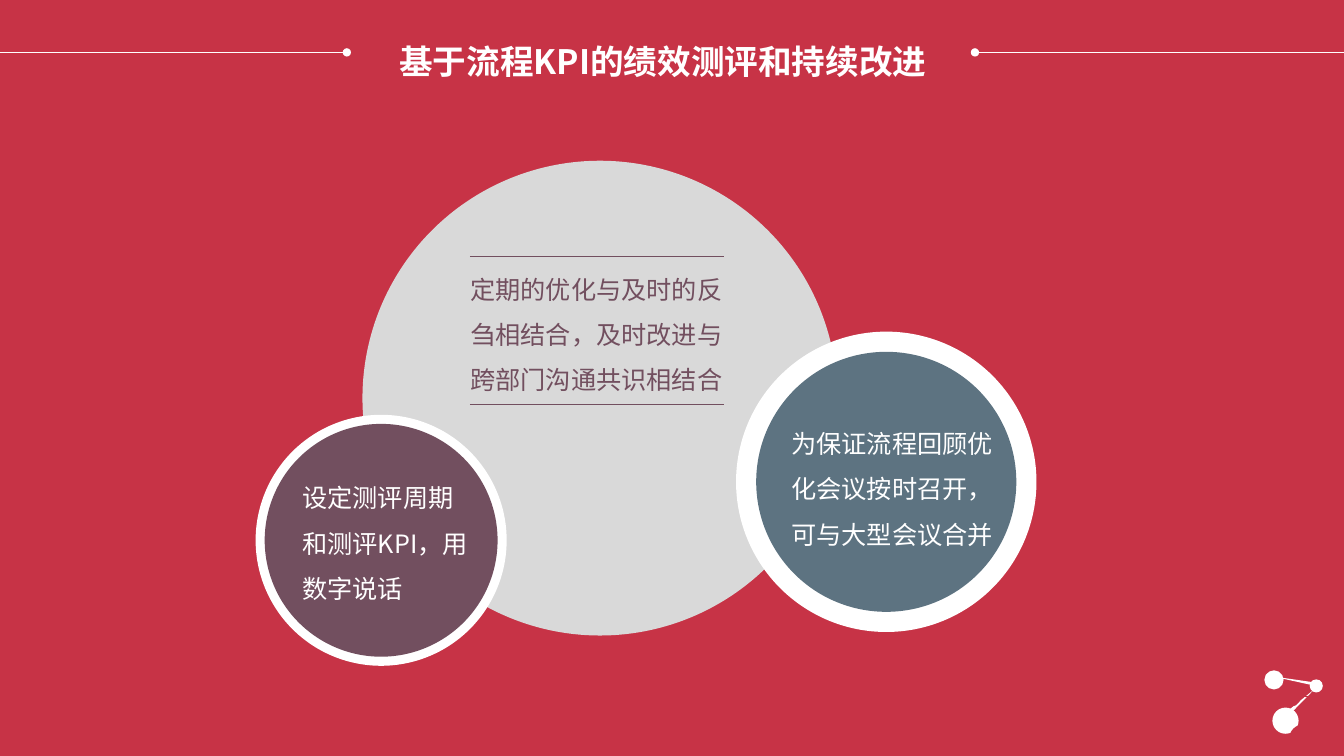
from lxml.etree import SubElement
from pptx import Presentation
from pptx.dml.color import RGBColor
from pptx.enum.shapes import MSO_CONNECTOR, MSO_SHAPE
from pptx.enum.text import MSO_ANCHOR, MSO_AUTO_SIZE, PP_ALIGN
from pptx.oxml.ns import qn
from pptx.util import Inches, Pt

FONT = "Noto Sans CJK SC"
COLORS = {"red": "C73346", "white": "FFFFFF", "gray": "D9D9D9",
          "slate": "5D7381", "plum": "724F5F"}


def add_solid(parent, kind, box, color, turn=0):
    shape = parent.add_shape(kind, *[Inches(n) for n in box])
    shape.fill.solid()
    shape.fill.fore_color.rgb = RGBColor.from_string(COLORS[color])
    shape.line.fill.background()
    shape.shadow.inherit = False
    shape.rotation = turn
    return shape


def set_text(shape, box, text, size, color, bold=False, align=PP_ALIGN.LEFT):
    shape.left, shape.top, shape.width, shape.height = [Inches(n) for n in box]
    frame = shape.text_frame
    frame.text = text
    frame.word_wrap = True
    frame.auto_size = MSO_AUTO_SIZE.SHAPE_TO_FIT_TEXT
    frame.vertical_anchor = MSO_ANCHOR.TOP
    para = frame.paragraphs[0]
    para.alignment = align
    para.line_spacing = 1.5
    font = para.runs[0].font
    font.size, font.bold, font.name = Pt(size), bold, FONT
    font.color.rgb = RGBColor.from_string(COLORS[color])
    # East Asian typeface
    SubElement(para.runs[0].font._element, qn("a:ea"), typeface=FONT)


deck = Presentation()
deck.slide_width, deck.slide_height = Inches(13.33), Inches(7.5)
slide = deck.slides.add_slide(deck.slide_layouts[5])
shapes = slide.shapes

# Red backdrop, placed behind the title
title = shapes.title
back = add_solid(shapes, MSO_SHAPE.RECTANGLE, (0, 0, 13.33, 7.5), "red")
title.element.addprevious(back.element)
set_text(title, (3.86, 0.16, 5.48, 0.64), "基于流程KPI的绩效测评和持续改进",
         24, "white", bold=True)

# Circles: center x, center y, diameter, color
circles = [
    (5.95, 3.95, 4.71, "gray"),
    (8.79, 4.78, 2.98, "white"),
    (8.79, 4.78, 2.58, "slate"),
    (3.78, 5.36, 2.49, "white"),
    (3.78, 5.36, 2.31, "plum"),
]
for x, y, size, color in circles:
    box = (x - size / 2, y - size / 2, size, size)
    add_solid(shapes, MSO_SHAPE.OVAL, box, color)

# Circle texts
notes = [
    ((4.48, 2.52, 2.87, 1.46), "定期的优化与及时的反刍相结合，及时改进与跨部门沟通共识相结合",
     "plum", PP_ALIGN.CENTER),
    ((7.75, 4.05, 2.38, 1.46), "为保证流程回顾优化会议按时召开，可与大型会议合并",
     "white", PP_ALIGN.LEFT),
    ((2.9, 4.59, 1.92, 1.46), "设定测评周期和测评KPI，用数字说话",
     "white", PP_ALIGN.LEFT),
]
for box, text, color, align in notes:
    set_text(shapes.add_textbox(0, 0, 0, 0), box, text, 18, color, align=align)

# Rules beside the title and around the middle text: start, end, y, color, dot
rules = [
    (3.44, 0, 0.52, "white", True),
    (9.67, 13.33, 0.52, "white", True),
    (4.66, 7.18, 2.54, "plum", False),
    (4.66, 7.18, 4.01, "plum", False),
]
for start, end, y, color, dot in rules:
    rule = shapes.add_connector(MSO_CONNECTOR.STRAIGHT, Inches(start), Inches(y),
                                Inches(end), Inches(y))
    rule.line.width = Pt(0.5)
    rule.line.color.rgb = RGBColor.from_string(COLORS[color])
    if dot:
        SubElement(rule.line._get_or_add_ln(), qn("a:headEnd"), type="oval")
    SubElement(rule.element.spPr, qn("a:effectLst"))

# Corner ornament: white nodes, then the same nodes in red, shifted
nodes = [
    (MSO_SHAPE.OVAL, 12.62, 7.02, 0.26, 0.26, 0),
    (MSO_SHAPE.OVAL, 12.99, 6.74, 0.13, 0.13, 0),
    (MSO_SHAPE.ISOSCELES_TRIANGLE, 12.85, 6.76, 0.05, 0.45, 47.7),
    (MSO_SHAPE.OVAL, 12.54, 6.65, 0.19, 0.19, 0),
    (MSO_SHAPE.ISOSCELES_TRIANGLE, 12.8, 6.54, 0.03, 0.41, 280.3),
]
for color, shift in (("white", 0), ("red", 0.17)):
    group = shapes.add_group_shape()
    for kind, x, y, wide, high, turn in nodes:
        box = (x + shift, y + shift, wide, high)
        add_solid(group.shapes, kind, box, color, turn)

deck.save("out.pptx")
